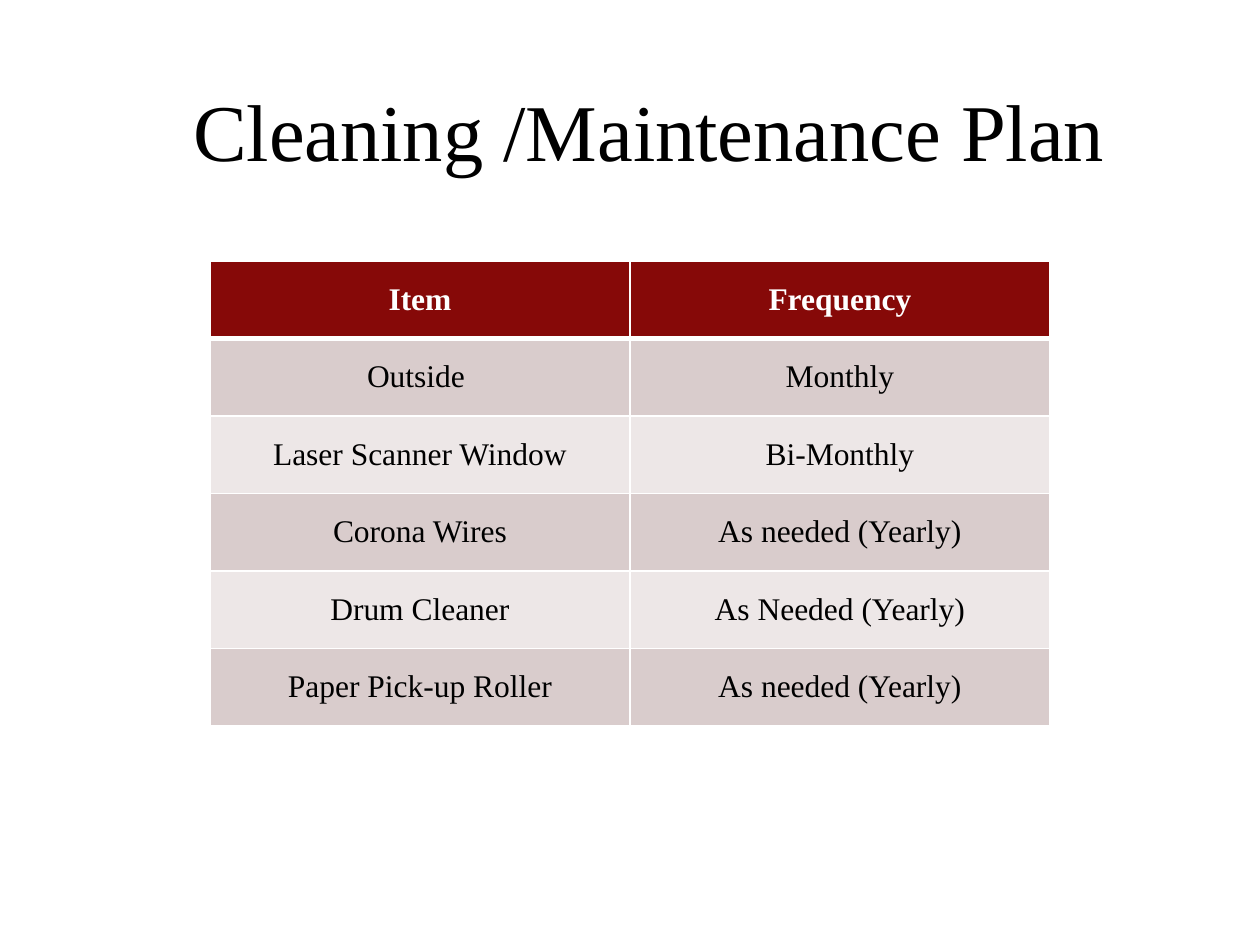
from lxml import etree
from pptx import Presentation
from pptx.dml.color import RGBColor
from pptx.enum.text import MSO_ANCHOR, PP_ALIGN
from pptx.oxml.ns import qn
from pptx.util import Inches, Pt

CENTER = PP_ALIGN.CENTER
MIDDLE = MSO_ANCHOR.MIDDLE
FONT = "Times New Roman"
BLACK = RGBColor(0x00, 0x00, 0x00)
WHITE = RGBColor(0xFF, 0xFF, 0xFF)
MAROON = RGBColor(0x86, 0x09, 0x08)
BANDS = (RGBColor(0xD9, 0xCC, 0xCC), RGBColor(0xED, 0xE7, 0xE7))
TITLE_ONLY = 5
WIDTH, HEIGHT = Inches(10), Inches(7.5)
TITLE_BOX = (Inches(0.65), Inches(0.55), Inches(9), Inches(0.95))
TABLE_BOX = (WIDTH // 6, Inches(2.07), WIDTH * 2 // 3, Inches(3.69))
PLAN = (
    ("Item", "Frequency"),
    ("Outside ", "Monthly"),
    ("Laser Scanner Window", "Bi-Monthly"),
    ("Corona Wires", "As needed (Yearly)"),
    ("Drum Cleaner", "As Needed (Yearly)"),
    ("Paper Pick-up Roller", "As needed (Yearly)"),
)


def write_text(frame, text, size=18, color=BLACK, bold=False):
    """Write one centred paragraph in the given format."""
    para = frame.paragraphs[0]
    para.alignment = CENTER
    span = para.add_run()
    span.text = text
    span.font.name = FONT
    span.font.size = Pt(size)
    span.font.bold = bold
    span.font.color.rgb = color


def set_borders(cell, top=1, bottom=1):
    """Draw white lines on the four sides of a cell, widths in points."""
    properties = cell._tc.get_or_add_tcPr()
    sides = (("a:lnL", 1), ("a:lnR", 1), ("a:lnT", top), ("a:lnB", bottom))
    for position, (tag, width) in enumerate(sides):
        line = etree.Element(qn(tag), w=str(Pt(width)))
        fill = etree.SubElement(line, qn("a:solidFill"))
        etree.SubElement(fill, qn("a:srgbClr"), val=str(WHITE))
        properties.insert(position, line)


def place_title(page, box, text):
    """Fill the title placeholder and fit it to the box."""
    title = page.shapes.title
    title.left, title.top, title.width, title.height = box
    title.text_frame.vertical_anchor = MIDDLE
    write_text(title.text_frame, text, size=46)


def place_table(page, box, rows):
    """Build the banded plan table, with equal rows and columns, in the box."""
    table = page.shapes.add_table(len(rows), len(rows[0]), *box).table
    for row, texts in enumerate(rows):
        header = row == 0
        for column, text in enumerate(texts):
            cell = table.cell(row, column)
            cell.vertical_anchor = MIDDLE
            cell.fill.solid()
            cell.fill.fore_color.rgb = MAROON if header else BANDS[(row - 1) % 2]
            set_borders(cell, top=3 if row == 1 else 1, bottom=3 if header else 1)
            write_text(cell.text_frame, text, color=WHITE if header else BLACK, bold=header)


def main():
    """Build and save the deck."""
    deck = Presentation()
    deck.slide_width, deck.slide_height = WIDTH, HEIGHT
    page = deck.slides.add_slide(deck.slide_layouts[TITLE_ONLY])
    page.background.fill.solid()
    page.background.fill.fore_color.rgb = WHITE
    place_title(page, TITLE_BOX, "Cleaning /Maintenance Plan")
    place_table(page, TABLE_BOX, PLAN)
    deck.save("out.pptx")


if __name__ == "__main__":
    main()
